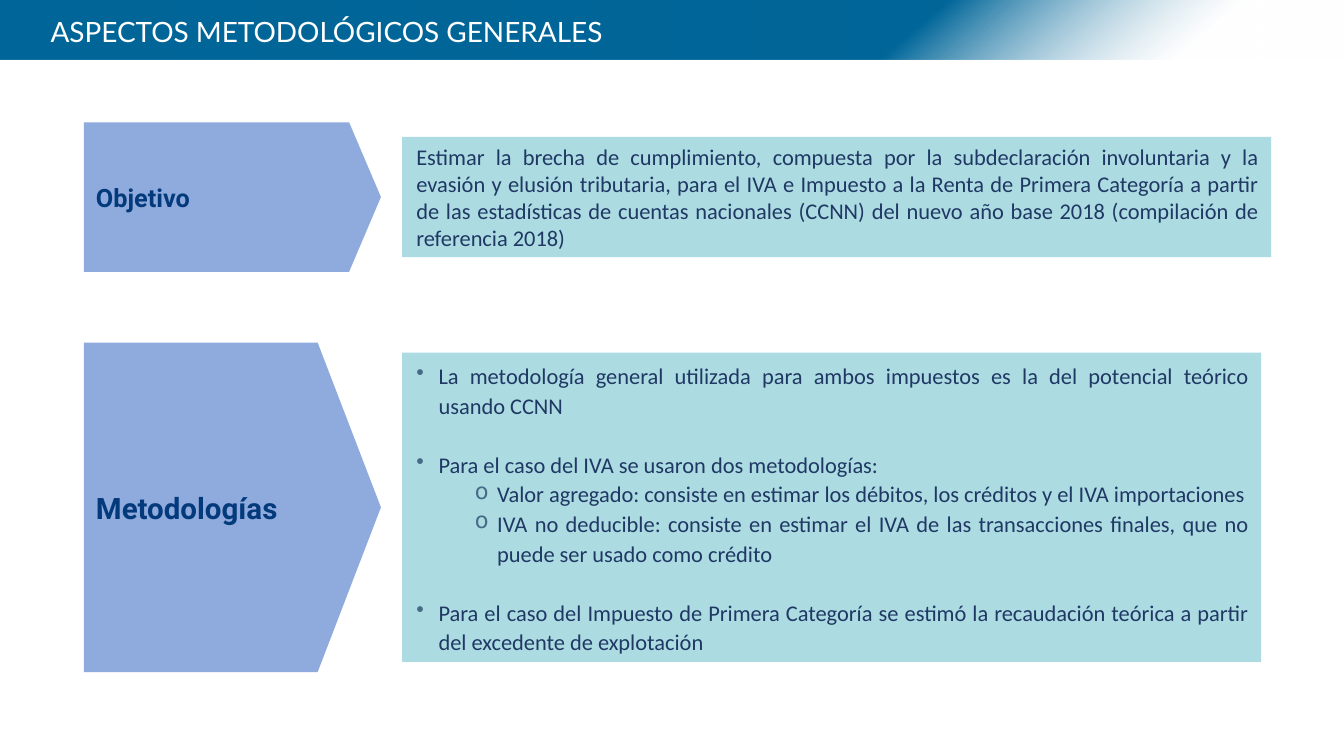
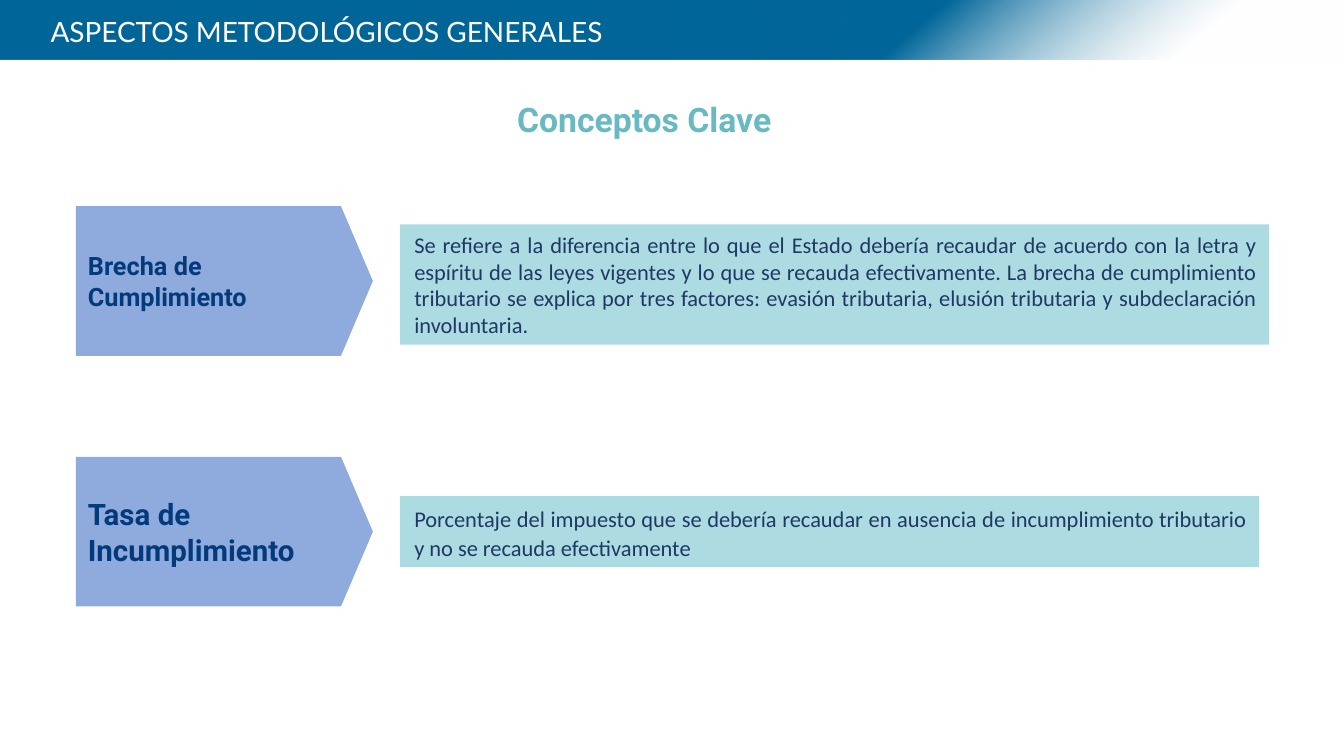
from dataclasses import dataclass
from typing import Any

from lxml.etree import SubElement
from pptx import Presentation
from pptx.dml.color import RGBColor
from pptx.enum.shapes import MSO_SHAPE as Preset
from pptx.enum.text import MSO_ANCHOR as Anchor, MSO_AUTO_SIZE as AutoSize, PP_ALIGN as Align
from pptx.oxml.ns import qn
from pptx.util import Inches, Length, Pt

# Grid of 133 columns by 74.8 rows
WIDTH, HEIGHT = Inches(13.3), Inches(7.48)
COL, ROW = WIDTH / 133, HEIGHT / 74.8

COLORS = {
    "band": "006699", "fade": "FFFFFF", "arrow": "8FAADC", "panel": "ACDCE2",
    "heading": "FFFFFF", "subtitle": "68B9C1", "label": "023A7C",
    "body": "203864", "bullet": "466B86",
}
HEADING = "ASPECTOS METODOLÓGICOS GENERALES"
ARROW_COLS = 29.4
ARROW_POINT = 0.213
BULLETS = ("•", "o")
BULLET_INDENT = (0.22, 0.8)

# Format values
FONTS = {
    "heading": {"name": "Lato", "size": Pt(19.9), "bold": False},
    "subtitle": {"name": "Roboto", "size": Pt(24), "bold": True},
    "label": {"name": "Roboto", "bold": True},
    "body": {"name": "Calibri", "size": Pt(16), "bold": False},
}
LABEL_FRAME = {
    "word_wrap": True, "vertical_anchor": Anchor.MIDDLE,
    "margin_left": Inches(0.12), "margin_right": Inches(0.12),
    "margin_top": Inches(0.06), "margin_bottom": Inches(0.06),
}
PANEL_FRAME = LABEL_FRAME | {"margin_left": Inches(0.14), "auto_size": AutoSize.SHAPE_TO_FIT_TEXT}
SUBTITLE_FRAME = LABEL_FRAME | {"vertical_anchor": Anchor.TOP}
HEADING_FRAME = {
    "word_wrap": True, "vertical_anchor": Anchor.TOP, "auto_size": AutoSize.NONE,
    "margin_left": Inches(0.1), "margin_right": Inches(0.1),
    "margin_top": Inches(0.05), "margin_bottom": Inches(0.05),
}


@dataclass(frozen=True)
class Line:
    text: str
    level: int | None = None  # None means no bullet
    gap: float = 0            # points before the line


@dataclass(frozen=True)
class Topic:
    label: str
    label_size: int
    middle: float             # row of the arrow's centre
    arrow_rows: float
    panel_cols: float
    panel_rows: float
    lines: tuple[Line, ...]
    spacing: float = 1.0
    panel_drop: float = 0     # rows from the arrow's centre to the panel's


@dataclass(frozen=True)
class Page:
    arrow_left: float
    panel_left: float
    topics: tuple[Topic, ...]
    subtitle: str = ""


PAGES = (
    Page(8.3, 39.8, (
        Topic("Objetivo", 18, 19.5, 14.8, 86, 11.9, (
            Line("Estimar la brecha de cumplimiento, compuesta por la subdeclaración involuntaria y la "
                 "evasión y elusión tributaria, para el IVA e Impuesto a la Renta de Primera Categoría "
                 "a partir de las estadísticas de cuentas nacionales (CCNN) del nuevo año base 2018 "
                 "(compilación de referencia 2018)"),
        )),
        Topic("Metodologías", 21, 50.2, 32.6, 85, 30.6, (
            Line("La metodología general utilizada para ambos impuestos es la del potencial teórico "
                 "usando CCNN", 0),
            Line("Para el caso del IVA se usaron dos metodologías:", 0, 21),
            Line("Valor agregado: consiste en estimar los débitos, los créditos y el IVA "
                 "importaciones", 1),
            Line("IVA no deducible: consiste en estimar el IVA de las transacciones finales, que no "
                 "puede ser usado como crédito", 1),
            Line("Para el caso del Impuesto de Primera Categoría se estimó la recaudación teórica a "
                 "partir del excedente de explotación", 0, 21),
        ), spacing=1.1),
    )),
    Page(7.5, 39.6, (
        Topic("Brecha de Cumplimiento", 18, 27.8, 14.8, 86, 11.9, (
            Line("Se refiere a la diferencia entre lo que el Estado debería recaudar de acuerdo con la "
                 "letra y espíritu de las leyes vigentes y lo que se recauda efectivamente. La brecha "
                 "de cumplimiento tributario se explica por tres factores: evasión tributaria, elusión "
                 "tributaria y subdeclaración involuntaria."),
        ), panel_drop=0.35),
        Topic("Tasa de Incumplimiento", 21, 52.6, 14.8, 85, 7, (
            Line("Porcentaje del impuesto que se debería recaudar en ausencia de incumplimiento "
                 "tributario y no se recauda efectivamente"),
        ), spacing=1.1),
    ), subtitle="Conceptos Clave"),
)


def rgb(role: str) -> RGBColor:
    return RGBColor.from_string(COLORS[role])


def apply(target: Any, formats: dict[str, Any]) -> None:
    for attribute, value in formats.items():
        setattr(target, attribute, value)


def area(left: float, top: float, cols: float, rows: float) -> dict[str, Length]:
    return {"left": Length(round(left * COL)), "top": Length(round(top * ROW)),
            "width": Length(round(cols * COL)), "height": Length(round(rows * ROW))}


def write(paragraph: Any, text: str, role: str, align: Align, **extra: Any) -> None:
    paragraph.alignment = align
    run = paragraph.add_run()
    run.text = text
    apply(run.font, FONTS[role] | extra)
    run.font.color.rgb = rgb(role)


def add_bullet(paragraph: Any, level: int) -> None:
    paragraph.level = level
    props = paragraph._p.get_or_add_pPr()
    props.set("marL", str(Inches(BULLET_INDENT[level])))
    props.set("indent", str(-Inches(BULLET_INDENT[0])))
    color = SubElement(props, qn("a:buClr"))
    SubElement(color, qn("a:srgbClr")).set("val", COLORS["bullet"])
    SubElement(props, qn("a:buChar")).set("char", BULLETS[level])


def add_block(slide: Any, preset: Preset, place: dict[str, Length], fill: str) -> Any:
    block = slide.shapes.add_shape(preset, **place)
    block.shadow.inherit = False
    block.line.fill.background()
    block.fill.solid()
    block.fill.fore_color.rgb = rgb(fill)
    return block


def add_heading(slide: Any) -> None:
    # Fading band, placed behind the title
    band = add_block(slide, Preset.RECTANGLE, area(0, 0, 133, 5.9), "band")
    band.fill.gradient()
    band.fill.gradient_angle = 310
    for stop, position, role in zip(band.fill.gradient_stops, (0.67, 0.88), ("band", "fade")):
        stop.position = position
        stop.color.rgb = rgb(role)
    faded = list(band._element.spPr.iter(qn("a:srgbClr")))[-1]
    SubElement(faded, qn("a:alpha")).set("val", "42000")
    slide.shapes._spTree.insert(2, band._element)

    title = slide.shapes.title
    apply(title, area(4, 0.9, 118.5, 4.2))
    apply(title.text_frame, HEADING_FRAME)
    write(title.text_frame.paragraphs[0], HEADING, "heading", Align.LEFT)


def add_subtitle(slide: Any, text: str) -> None:
    frame = slide.shapes.add_textbox(**area(9.7, 9.2, 108.1, 5.2)).text_frame
    apply(frame, SUBTITLE_FRAME)
    write(frame.paragraphs[0], text, "subtitle", Align.CENTER)


def add_topic(slide: Any, page: Page, topic: Topic) -> None:
    # Text panel
    panel_top = topic.middle + topic.panel_drop - topic.panel_rows / 2
    panel = add_block(slide, Preset.RECTANGLE,
                      area(page.panel_left, panel_top, topic.panel_cols, topic.panel_rows), "panel")
    frame = panel.text_frame
    apply(frame, PANEL_FRAME)
    for index, line in enumerate(topic.lines):
        paragraph = frame.add_paragraph() if index else frame.paragraphs[0]
        if line.level is not None:
            add_bullet(paragraph, line.level)
        paragraph.line_spacing = topic.spacing
        if line.gap:
            paragraph.space_before = Pt(line.gap)
        write(paragraph, line.text, "body", Align.JUSTIFY)

    # Labelled arrow
    arrow_top = topic.middle - topic.arrow_rows / 2
    arrow = add_block(slide, Preset.PENTAGON,
                      area(page.arrow_left, arrow_top, ARROW_COLS, topic.arrow_rows), "arrow")
    arrow.adjustments[0] = ARROW_POINT
    apply(arrow.text_frame, LABEL_FRAME)
    write(arrow.text_frame.paragraphs[0], topic.label, "label", Align.LEFT,
          size=Pt(topic.label_size))


def main() -> None:
    deck = Presentation()
    apply(deck, {"slide_width": WIDTH, "slide_height": HEIGHT})
    title_only = deck.slide_layouts[5]
    for page in PAGES:
        slide = deck.slides.add_slide(title_only)
        add_heading(slide)
        if page.subtitle:
            add_subtitle(slide, page.subtitle)
        for topic in page.topics:
            add_topic(slide, page, topic)
    deck.save("out.pptx")


if __name__ == "__main__":
    main()
